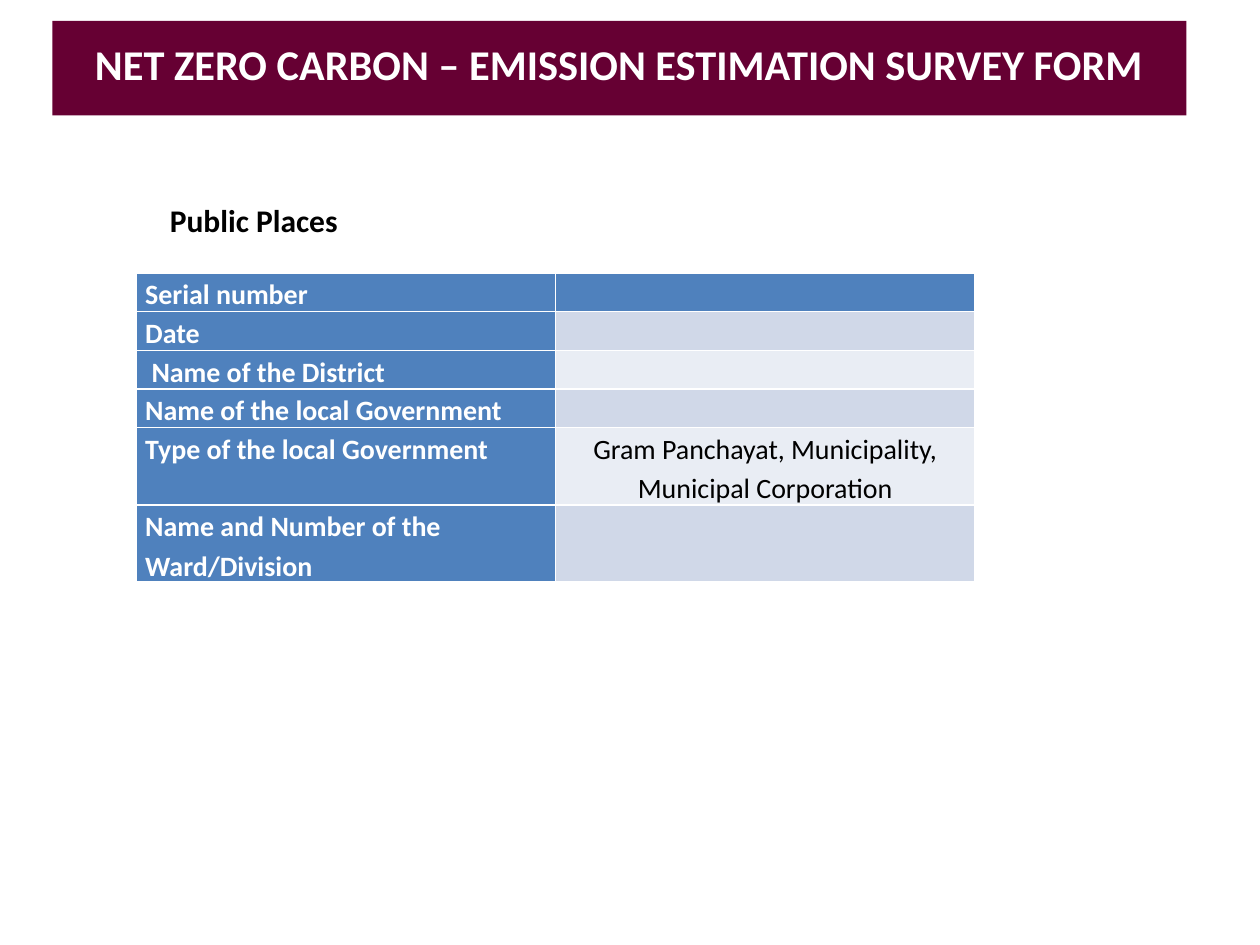
"""Build the public places page of the net zero carbon survey form."""
from pptx import Presentation
from pptx.dml.color import RGBColor
from pptx.enum.text import MSO_ANCHOR, MSO_AUTO_SIZE, PP_ALIGN
from pptx.util import Pt

CENTER, LEFT = PP_ALIGN.CENTER, PP_ALIGN.LEFT
MIDDLE = MSO_ANCHOR.MIDDLE
NO_FIT, GROW = MSO_AUTO_SIZE.NONE, MSO_AUTO_SIZE.SHAPE_TO_FIT_TEXT

TITLE = "NET ZERO CARBON – EMISSION ESTIMATION SURVEY FORM"
SECTION = "Public Places"
FIELDS = [
    {"label": "Serial number"},
    {"label": "Date"},
    {"label": "Name of the District", "indent": 3.6},
    {"label": "Name of the local Government"},
    {"label": "Type of the local Government", "lines": 2,
     "answer": "Gram Panchayat, Municipality, Municipal Corporation"},
    {"label": "Name and Number of the Ward/Division", "lines": 2},
]
THEME = {
    "font": "Calibri", "title_size": 24.2, "section_size": 18, "field_size": 16,
    "banner": "660033", "label": "4F81BD", "bands": ("E9EDF4", "D0D8E8"),
    "light": "FFFFFF", "dark": "000000",
}
LINE_HEIGHT, COLUMN_WIDTH, CELL_INSET = 22.1, 239.5, 5


def paint(part, color):
    part.fill.solid()
    part.fill.fore_color.rgb = RGBColor.from_string(THEME[color] if color in THEME else color)


def write(frame, text, size, color, bold=True, align=LEFT, spacing=1.15):
    paragraph = frame.paragraphs[0]
    paragraph.text = text
    paragraph.alignment = align
    paragraph.line_spacing = spacing
    font = paragraph.font
    font.name, font.size, font.bold = THEME["font"], Pt(THEME[size]), bold
    font.color.rgb = RGBColor.from_string(THEME[color])
    return paragraph


def add_banner(slide):
    banner = slide.shapes.title
    banner.left, banner.top, banner.width, banner.height = Pt(30), Pt(12), Pt(648), Pt(54)
    paint(banner, "banner")
    frame = banner.text_frame
    frame.auto_size, frame.vertical_anchor = NO_FIT, MIDDLE
    write(frame, TITLE, "title_size", "light", align=CENTER, spacing=0.8)


def add_section(slide):
    frame = slide.shapes.add_textbox(Pt(90), Pt(108), Pt(111), Pt(31)).text_frame
    frame.word_wrap, frame.auto_size = False, GROW
    write(frame, SECTION, "section_size", "dark").space_after = Pt(10)


def add_form(slide):
    heights = [LINE_HEIGHT * field.get("lines", 1) for field in FIELDS]
    form = slide.shapes.add_table(
        len(FIELDS), 2, Pt(78), Pt(156), Pt(2 * COLUMN_WIDTH), Pt(sum(heights))).table
    form.first_col = True
    for index, (field, height) in enumerate(zip(FIELDS, heights)):
        form.rows[index].height = Pt(height)
        label, answer = form.rows[index].cells
        for cell in (label, answer):
            cell.margin_left = cell.margin_right = Pt(CELL_INSET)
            cell.margin_top = cell.margin_bottom = 0
        label.margin_left = Pt(CELL_INSET + field.get("indent", 0))
        paint(label, "label")
        paint(answer, THEME["bands"][index % 2] if index else "label")
        write(label.text_frame, field["label"], "field_size", "light")
        write(answer.text_frame, field.get("answer", ""), "field_size", "dark",
              bold=False, align=CENTER)


def main():
    deck = Presentation()
    deck.slide_width, deck.slide_height = Pt(720), Pt(540)
    slide = deck.slides.add_slide(deck.slide_layouts[5])
    add_banner(slide)
    add_section(slide)
    add_form(slide)
    deck.save("out.pptx")


if __name__ == "__main__":
    main()
